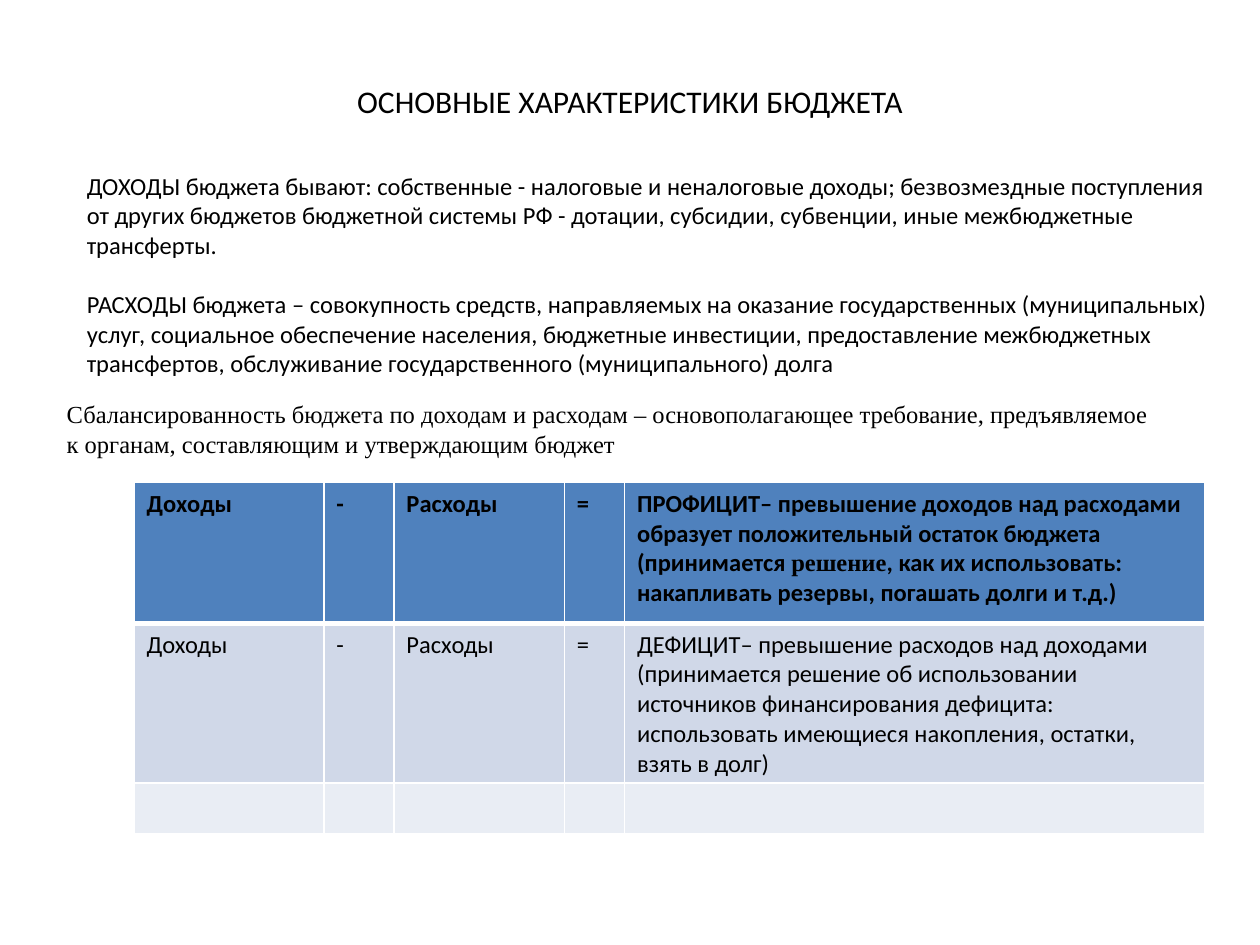
from dataclasses import dataclass

from lxml.etree import SubElement
from pptx import Presentation
from pptx.dml.color import RGBColor
from pptx.enum.text import MSO_AUTO_SIZE as AutoSize, PP_ALIGN as Align
from pptx.oxml.ns import qn
from pptx.util import Pt


@dataclass(frozen=True)
class Theme:
    sans: str = "Calibri"
    serif: str = "Times New Roman"
    title_size: float = 18
    body_size: float = 14
    body_line: float = 17.1
    ink: str = "000000"
    border: str = "FFFFFF"
    row_fills: tuple = ("4F81BD", "D0D8E8", "E9EDF4")


class SlideBuilder:
    def __init__(self, page, theme):
        self.page = page
        self.theme = theme

    def style(self, span, size, font, bold=False):
        span.font.size = Pt(size)
        span.font.name = font
        span.font.bold = bold
        span.font.color.rgb = RGBColor.from_string(self.theme.ink)

    def text(self, bounds, content, size, font, align=Align.LEFT, top_inset=3.6, gap=0):
        box = self.page.shapes.add_textbox(*map(Pt, bounds))
        frame = box.text_frame
        frame.word_wrap = True
        frame.auto_size = AutoSize.SHAPE_TO_FIT_TEXT
        frame.margin_top = Pt(top_inset)
        frame.text = content
        for index, para in enumerate(frame.paragraphs):
            para.alignment = align
            if index:
                para.space_before = Pt(gap)
            for span in para.runs:
                self.style(span, size, font)

    def borders(self, cell, bottom_width):
        properties = cell._tc.get_or_add_tcPr()
        for side, width in (("L", 1), ("R", 1), ("T", 1), ("B", bottom_width)):
            line = SubElement(properties, qn(f"a:ln{side}"), w=str(Pt(width)))
            fill = SubElement(line, qn("a:solidFill"))
            SubElement(fill, qn("a:srgbClr"), val=self.theme.border)

    def table(self, left, top, widths, heights, rows):
        frame = self.page.shapes.add_table(
            len(heights), len(widths), Pt(left), Pt(top), Pt(sum(widths)), Pt(sum(heights)))
        table = frame.table
        for column, width in zip(table.columns, widths):
            column.width = Pt(width)
        for row, height in zip(table.rows, heights):
            row.height = Pt(height)
        for row_index, row in enumerate(table.rows):
            header = row_index == 0
            for cell in row.cells:
                self.borders(cell, 3 if header else 1)
                cell.fill.solid()
                cell.fill.fore_color.rgb = RGBColor.from_string(self.theme.row_fills[row_index])
        # Each cell holds a list of (text, font) spans
        for row_index, cells in enumerate(rows):
            for column_index, spans in enumerate(cells):
                para = table.cell(row_index, column_index).text_frame.paragraphs[0]
                for content, font in spans:
                    span = para.add_run()
                    span.text = content
                    self.style(span, self.theme.body_size, font, bold=row_index == 0)


def main():
    deck = Presentation()
    deck.slide_width, deck.slide_height = Pt(720), Pt(540)
    theme = Theme()
    slide = SlideBuilder(deck.slides.add_slide(deck.slide_layouts[6]), theme)

    # Title
    slide.text((54, 43.2, 612, 29), "ОСНОВНЫЕ ХАРАКТЕРИСТИКИ БЮДЖЕТА",
               theme.title_size, theme.sans, Align.CENTER)

    # Income and spending definitions
    definitions = (
        "ДОХОДЫ бюджета бывают: собственные - налоговые и неналоговые доходы; "
        "безвозмездные поступления от других бюджетов бюджетной системы РФ - дотации, "
        "субсидии, субвенции, иные межбюджетные трансферты.",
        "РАСХОДЫ бюджета – совокупность средств, направляемых на оказание государственных "
        "(муниципальных) услуг, социальное обеспечение населения, бюджетные инвестиции, "
        "предоставление межбюджетных трансфертов, обслуживание государственного "
        "(муниципального) долга",
    )
    slide.text((42.5, 77, 663, 143.3), "\n".join(definitions), theme.body_size, theme.sans,
               top_inset=3.6 + theme.body_line, gap=theme.body_line)

    # Balance requirement
    slide.text((31, 224.6, 641, 40),
               "Сбалансированность бюджета по доходам и расходам – основополагающее требование, "
               "предъявляемое к органам, составляющим и утверждающим бюджет",
               theme.body_size, theme.serif)

    # Surplus and deficit table
    formula = [[(word, theme.sans)] for word in ("Доходы", "-", "Расходы", "=")]
    surplus = [
        ("ПРОФИЦИТ– превышение доходов над расходами образует положительный остаток "
         "бюджета (принимается ", theme.sans),
        ("решение", theme.serif),
        (", как их использовать: накапливать резервы, погашать долги и т.д.)", theme.sans),
    ]
    deficit = [
        ("ДЕФИЦИТ– превышение расходов над доходами (принимается решение об использовании "
         "источников финансирования дефицита: использовать имеющиеся накопления, остатки, "
         "взять в долг)", theme.sans),
    ]
    slide.table(76.6, 275.8, (108.5, 40, 97.4, 34.4, 331.8), (80.5, 80.5, 25.2),
                (formula + [surplus], formula + [deficit]))

    deck.save("out.pptx")


if __name__ == "__main__":
    main()
